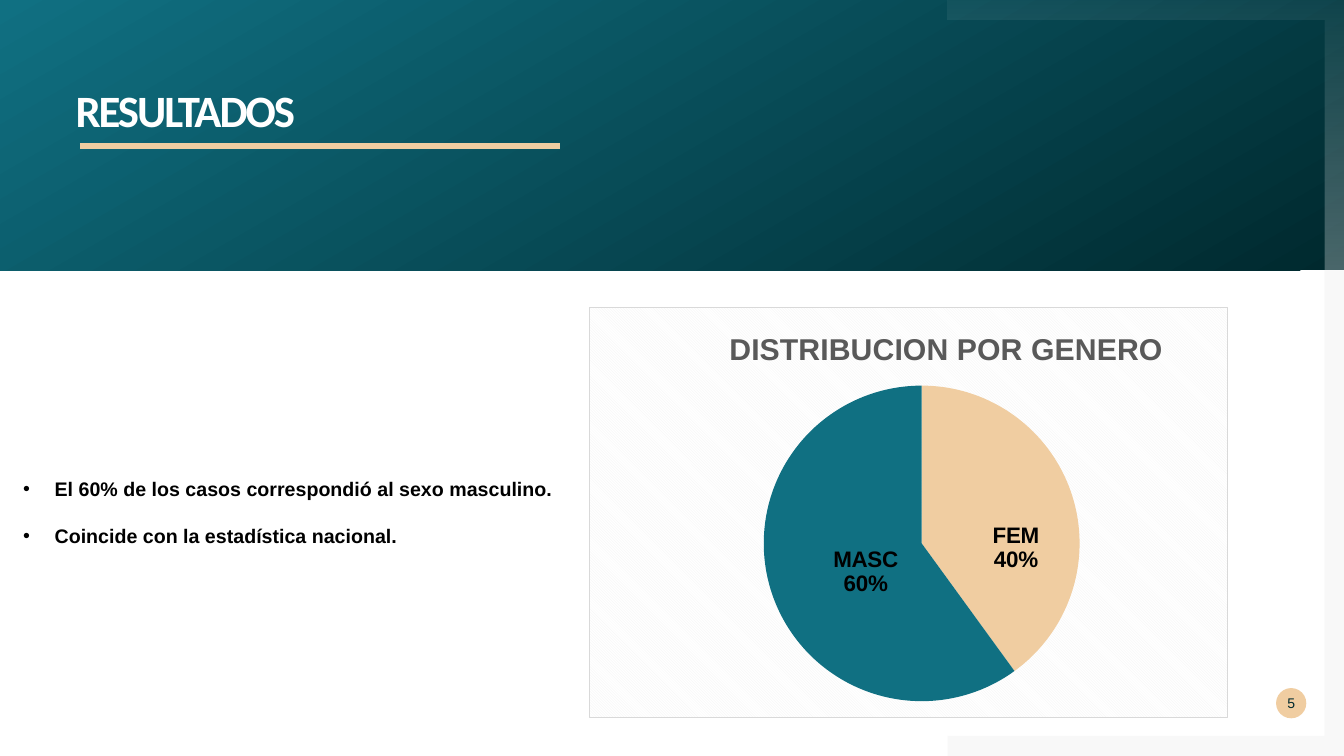
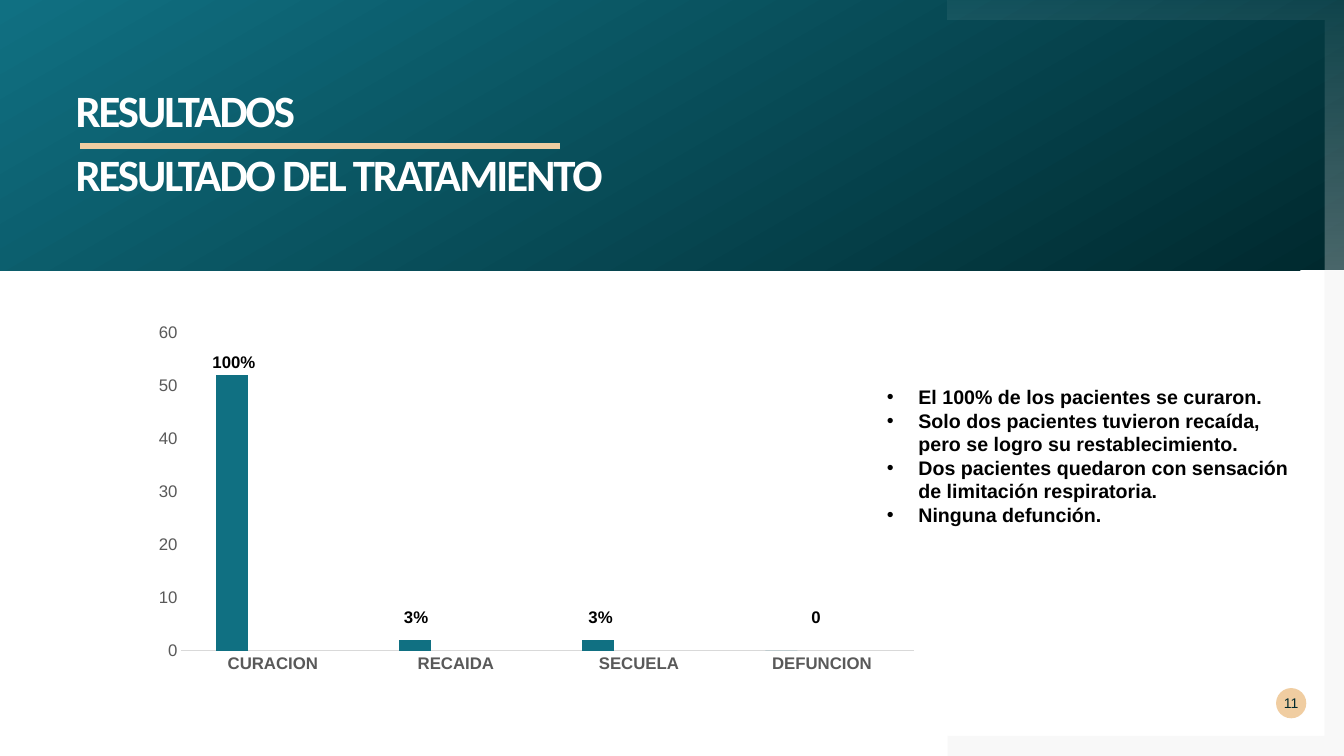
from copy import deepcopy
from dataclasses import dataclass

from lxml import etree
from pptx import Presentation
from pptx import util as u
from pptx.chart import data as chart_data
from pptx.dml import color
from pptx.enum import chart as charts, shapes, text
from pptx.oxml import ns, parse_xml

Pt = u.Pt


def rgb(value: str) -> color.RGBColor:
    return color.RGBColor.from_string(value)


@dataclass(frozen=True)
class Theme:
    teal: str = "107082"
    night: str = "00292E"
    sand: str = "F0CDA1"
    sky: str = "00AEEF"
    orange: str = "EC7216"
    white: str = "FFFFFF"
    black: str = "000000"
    grey: str = "808080"
    label_grey: str = "595959"
    rule_grey: str = "D9D9D9"
    hatch_grey: str = "F2F2F2"
    body_font: str = "Arial"
    title_font: str = "Calibri"
    title_size: float = 32
    chart_title_size: float = 21.6
    pie_label_size: float = 16
    body_size: float = 14
    axis_size: float = 12
    small_size: float = 10
    body_line: float = 16.8
    indent: float = 22.5


THEME = Theme()
PAGE_WIDTH, PAGE_HEIGHT, BAND_HEIGHT = 960, 540, 193


@dataclass(frozen=True)
class Frame:
    left: float
    top: float
    width: float
    height: float

    def lengths(self) -> tuple:
        return tuple(Pt(n) for n in (self.left, self.top, self.width, self.height))


@dataclass(frozen=True)
class Caption:
    words: str
    frame: Frame


@dataclass(frozen=True)
class Layout:
    """Place of a chart part, as fractions of the chart."""
    x: float
    y: float
    width: float = 0
    height: float = 0


def font_format(size: float, tone: str, bold: bool = False,
                name: str = THEME.body_font) -> dict:
    return {"size": Pt(size), "name": name, "bold": bold, "color": tone}


def style_font(font, formats: dict) -> None:
    for key, value in formats.items():
        if key == "color":
            font.color.rgb = rgb(value)
        else:
            setattr(font, key, value)


def add_text(page, caption: Caption, formats: dict, margin: float | None = None,
             wrap: bool = False):
    box = page.shapes.add_textbox(*caption.frame.lengths())
    body = box.text_frame
    body.word_wrap = wrap
    if margin is not None:
        for side in ("left", "top", "right", "bottom"):
            setattr(body, f"margin_{side}", Pt(margin))
    for number, line in enumerate(caption.words.split("\n")):
        para = body.add_paragraph() if number else body.paragraphs[0]
        para.text = line
        for span in para.runs:
            style_font(span.font, formats)
    return box


def add_title(page, words: str, top: float) -> None:
    formats = font_format(THEME.title_size, THEME.white, True, THEME.title_font)
    box = add_text(page, Caption(words, Frame(54, top, 595.5, 28.8)), formats, 0, True)
    box.text_frame.paragraphs[0].line_spacing = 0.9
    for props in box.element.xpath(".//a:rPr"):
        props.set("spc", "-150")


def add_bullets(page, caption: Caption, gap: float = 0) -> None:
    box = add_text(page, caption, font_format(THEME.body_size, THEME.black, True))
    for number, para in enumerate(box.text_frame.paragraphs):
        para.line_spacing = Pt(THEME.body_line)
        para.space_before = Pt(gap if number else 0)
    for props in box.element.xpath(".//a:pPr"):
        props.set("marL", str(Pt(THEME.indent)))
        props.set("indent", str(-Pt(THEME.indent)))
        etree.SubElement(props, ns.qn("a:buFont"), typeface=THEME.body_font)
        etree.SubElement(props, ns.qn("a:buChar"), char="•")


def fill_gradient(shape, first: str, last: str, angle: float) -> None:
    shape.fill.gradient()
    shape.fill.gradient_angle = angle
    for stop, tone in zip(shape.fill.gradient_stops, (first, last)):
        stop.color.rgb = rgb(tone)


def set_opacity(shape, *percents: int) -> None:
    for tone, percent in zip(shape.element.xpath("./p:spPr//a:srgbClr"), percents):
        etree.SubElement(tone, ns.qn("a:alpha"), val=str(percent * 1000))


def clear_outline(shape) -> None:
    shape.line.fill.background()
    shape.shadow.inherit = False


def add_corner(page, edge: float, inner: float, far: float):
    """L-shaped frame in a right-hand corner: along edge, then up or down to far."""
    left, right, rim = 677, PAGE_WIDTH, 946
    points = [(left, edge), (right, edge), (right, far), (rim, far),
              (rim, inner), (left, inner)]
    points = [(Pt(x), Pt(y)) for x, y in points]
    builder = page.shapes.build_freeform(*points[0])
    builder.add_line_segments(points[1:])
    corner = builder.convert_to_shape()
    clear_outline(corner)
    return corner


def add_page(deck, number: int):
    """Blank slide with the band, corner frames, title, rule and page number."""
    page = deck.slides.add_slide(deck.slide_layouts[6])
    rim = 14.4
    lower = add_corner(page, PAGE_HEIGHT, PAGE_HEIGHT - rim, BAND_HEIGHT)
    lower.fill.solid()
    lower.fill.fore_color.rgb = rgb(THEME.grey)
    set_opacity(lower, 5)

    band = page.shapes.add_shape(shapes.MSO_SHAPE.RECTANGLE,
                                 *Frame(0, 0, PAGE_WIDTH, BAND_HEIGHT).lengths())
    clear_outline(band)
    fill_gradient(band, THEME.night, THEME.teal, 120)

    upper = add_corner(page, 0, rim, BAND_HEIGHT)
    fill_gradient(upper, THEME.white, THEME.white, 270)
    set_opacity(upper, 5, 30)

    add_title(page, "RESULTADOS", 63.4)

    badge = page.shapes.add_shape(shapes.MSO_SHAPE.OVAL,
                                  *Frame(911.5, 491.5, 21.6, 21.6).lengths())
    clear_outline(badge)
    badge.fill.solid()
    badge.fill.fore_color.rgb = rgb(THEME.sand)
    body = badge.text_frame
    for name in ("margin_left", "margin_top", "margin_right", "margin_bottom"):
        setattr(body, name, 0)
    body.word_wrap = False
    body.vertical_anchor = text.MSO_ANCHOR.MIDDLE
    para = body.paragraphs[0]
    para.text = str(number)
    para.alignment = text.PP_ALIGN.CENTER
    style_font(para.runs[0].font, font_format(THEME.small_size, THEME.night))

    rule = page.shapes.add_connector(shapes.MSO_CONNECTOR.STRAIGHT,
                                     Pt(57), Pt(104.4), Pt(400), Pt(104.4))
    rule.line.color.rgb = rgb(THEME.sand)
    rule.line.width = Pt(4.32)
    etree.SubElement(rule.element.xpath("./p:spPr")[0], ns.qn("a:effectLst"))
    return page


def place_part(part, index: int, layout: Layout, plot: bool = False,
               edge: bool = True) -> None:
    for old in part.findall(ns.qn("c:layout")):
        part.remove(old)
    holder = etree.Element(ns.qn("c:layout"))
    manual = etree.SubElement(holder, ns.qn("c:manualLayout"))
    values = [("layoutTarget", "inner")] if plot else []
    if edge:
        values += [("xMode", "edge"), ("yMode", "edge")]
    values += [("x", layout.x), ("y", layout.y)]
    if plot:
        values += [("w", layout.width), ("h", layout.height)]
    for name, value in values:
        etree.SubElement(manual, ns.qn(f"c:{name}"), val=str(value))
    part.insert(index, holder)


def add_chart(page, kind, frame: Frame, categories: list, series: list, plot: Layout):
    data = chart_data.CategoryChartData()
    data.categories = categories
    for number, values in enumerate(series, 1):
        data.add_series(f"Series {number}", values)
    chart = page.shapes.add_chart(kind, *frame.lengths(), data).chart
    style_font(chart.font, font_format(THEME.small_size, THEME.black))
    chart.has_legend = False
    chart.has_title = False
    place_part(chart.element.xpath("c:chart/c:plotArea")[0], 0, plot, plot=True)
    return chart


def hatch_background(chart) -> None:
    def tone(value: str) -> str:
        return f'<a:srgbClr val="{value}"/>'
    chart.element.find(ns.qn("c:chart")).addnext(parse_xml(
        f'<c:spPr {ns.nsdecls("c", "a")}><a:pattFill prst="dkDnDiag">'
        f'<a:fgClr>{tone(THEME.hatch_grey)}</a:fgClr>'
        f'<a:bgClr>{tone(THEME.white)}</a:bgClr></a:pattFill>'
        f'<a:ln w="{Pt(0.75)}"><a:solidFill>{tone(THEME.rule_grey)}</a:solidFill></a:ln>'
        f'</c:spPr>'))


def label_slices(chart, shifts: list) -> None:
    """Label each slice with name and percentage, shifted from its centre."""
    labels = chart.plots[0].series[0].data_labels
    options = {"show_value": False, "show_category_name": True, "show_percentage": True,
               "position": charts.XL_LABEL_POSITION.CENTER}
    for name, value in options.items():
        setattr(labels, name, value)
    style_font(labels.font, font_format(THEME.pie_label_size, THEME.black, True))
    group = chart.element.xpath(".//c:ser/c:dLbls")[0]
    for leader in group.findall(ns.qn("c:showLeaderLines")):
        group.remove(leader)
    etree.SubElement(group, ns.qn("c:separator")).text = "\n"
    shared = list(group)
    for number, shift in enumerate(shifts):
        label = etree.Element(ns.qn("c:dLbl"))
        etree.SubElement(label, ns.qn("c:idx"), val=str(number))
        label.extend(deepcopy(part) for part in shared)
        place_part(label, 1, shift, edge=False)
        group.insert(number, label)


def build_gender_page(deck) -> None:
    page = add_page(deck, 5)
    add_bullets(page, Caption("El 60% de los casos correspondió al sexo masculino.\n"
                              "Coincide con la estadística nacional.",
                              Frame(9.4, 337, 394.6, 58.3)), THEME.body_line)
    chart = add_chart(page, charts.XL_CHART_TYPE.PIE, Frame(421, 219.5, 456.5, 293.5),
                      ["FEM", "MASC"], [(40, 60)], Layout(0.27, 0.19, 0.5, 0.77))
    chart.has_title = True
    title = chart.chart_title.text_frame
    title.text = "DISTRIBUCION POR GENERO"
    style_font(title.paragraphs[0].runs[0].font,
               font_format(THEME.chart_title_size, THEME.label_grey, True))
    place_part(chart.element.xpath("c:chart/c:title")[0], 1, Layout(0.21, 0.04))
    hatch_background(chart)
    chart.plots[0].vary_by_categories = True
    for number, tone in enumerate((THEME.sand, THEME.teal)):
        fill = chart.plots[0].series[0].points[number].format.fill
        fill.solid()
        fill.fore_color.rgb = rgb(tone)
    label_slices(chart, [Layout(0.03, 0.07), Layout(0.03, 0.01)])


def build_treatment_page(deck) -> None:
    page = add_page(deck, 11)
    add_title(page, "RESULTADO DEL TRATAMIENTO", 108.8)
    bar_labels = [Caption("100%", Frame(144.7, 247.7, 45.4, 21.6)),
                  Caption("3%", Frame(281.5, 429.8, 31.7, 21.6)),
                  Caption("3%", Frame(413.3, 429.8, 31.7, 21.6)),
                  Caption("0", Frame(572.4, 429.8, 20.9, 21.6))]
    for label in bar_labels:
        add_text(page, label, font_format(THEME.axis_size, THEME.black, True))

    chart = add_chart(page, charts.XL_CHART_TYPE.COLUMN_CLUSTERED,
                      Frame(101.5, 224.6, 562.3, 261.4),
                      ["CURACION", "RECAIDA", "SECUELA", "DEFUNCION"],
                      [(52, 2, 2, 0), (None,) * 4, (None,) * 4],
                      Layout(0.05, 0.05, 0.93, 0.87))
    plot = chart.plots[0]
    for name, value in {"gap_width": 219, "overlap": -27,
                        "vary_by_categories": False}.items():
        setattr(plot, name, value)
    for series, tone in zip(plot.series, (THEME.teal, THEME.sky, THEME.orange)):
        series.format.fill.solid()
        series.format.fill.fore_color.rgb = rgb(tone)
    for axis, bold in ((chart.category_axis, True), (chart.value_axis, False)):
        axis.has_major_gridlines = False
        axis.major_tick_mark = charts.XL_TICK_MARK.NONE
        style_font(axis.tick_labels.font,
                   font_format(THEME.axis_size, THEME.label_grey, bold))
    chart.category_axis.format.line.color.rgb = rgb(THEME.rule_grey)
    chart.category_axis.format.line.width = Pt(0.75)
    scale = chart.value_axis
    scale.format.line.fill.background()
    scale.minimum_scale, scale.maximum_scale, scale.major_unit = 0, 60, 10

    add_bullets(page, Caption("El 100% de los pacientes se curaron.\n"
                              "Solo dos pacientes tuvieron recaída,\v"
                              "pero se logro su restablecimiento.\n"
                              "Dos pacientes quedaron con sensación\v"
                              "de limitación respiratoria.\n"
                              "Ninguna defunción.", Frame(626.4, 271.4, 306, 108.7)))


def main() -> None:
    deck = Presentation()
    deck.slide_width, deck.slide_height = Pt(PAGE_WIDTH), Pt(PAGE_HEIGHT)
    build_gender_page(deck)
    build_treatment_page(deck)
    deck.save("out.pptx")


if __name__ == "__main__":
    main()
